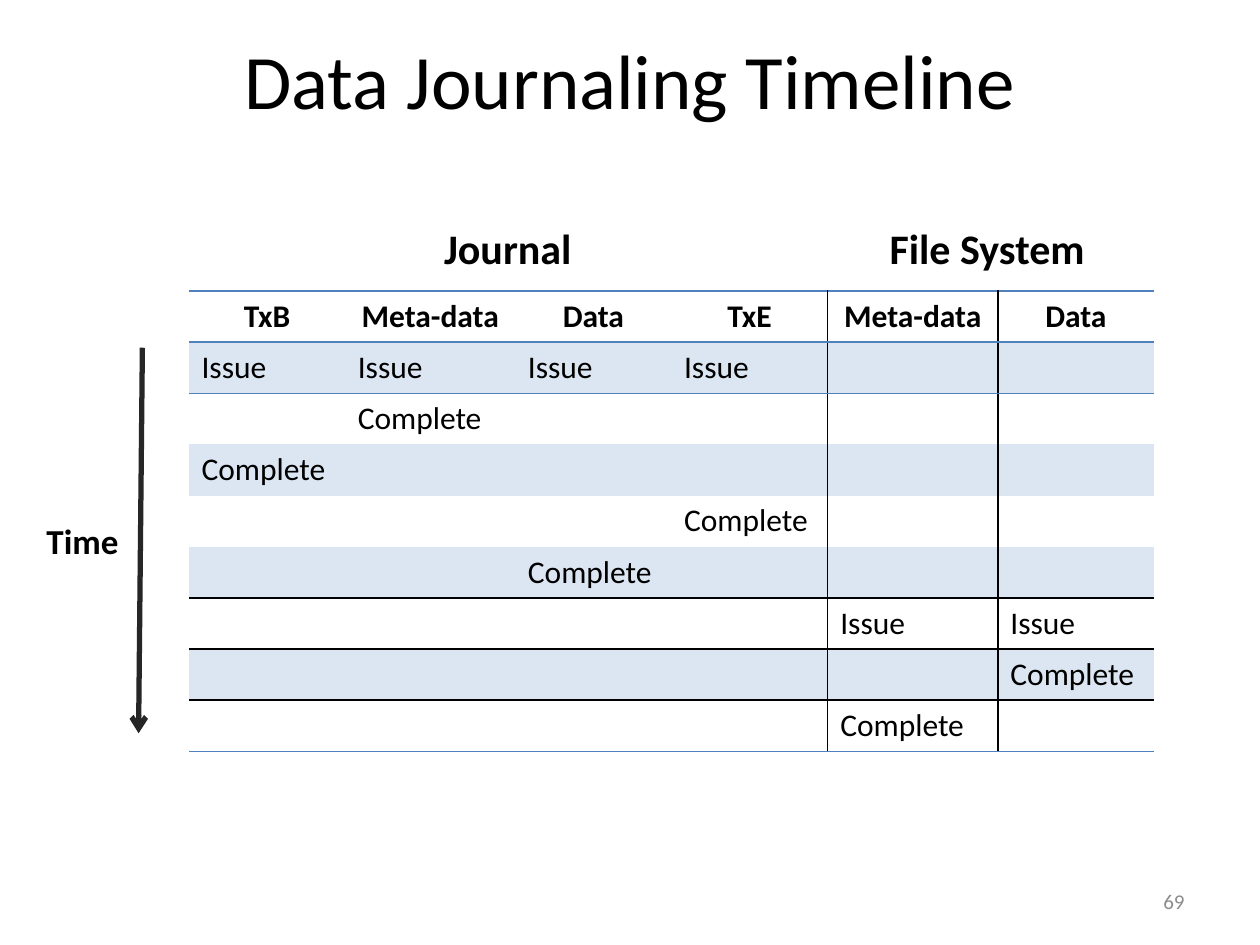
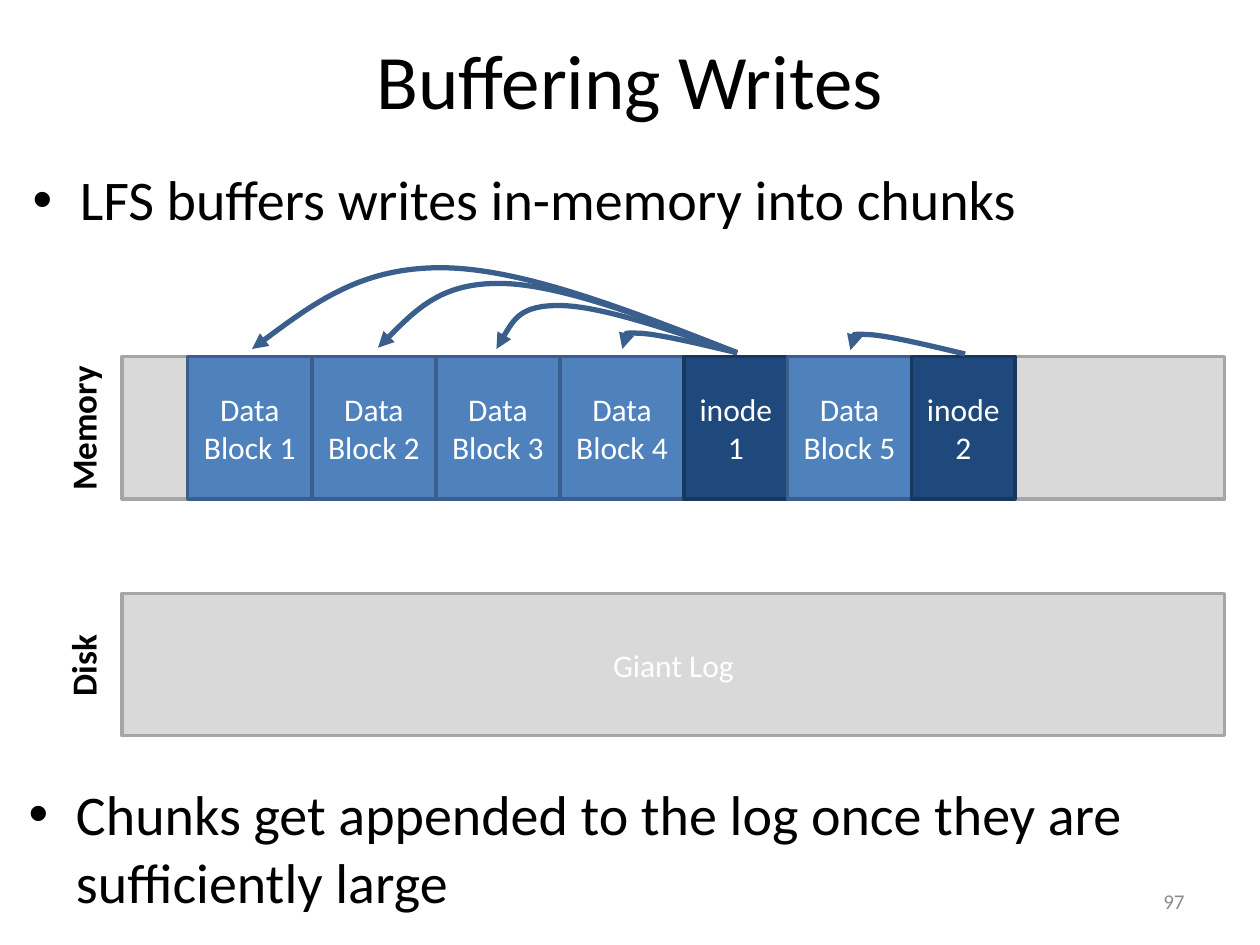
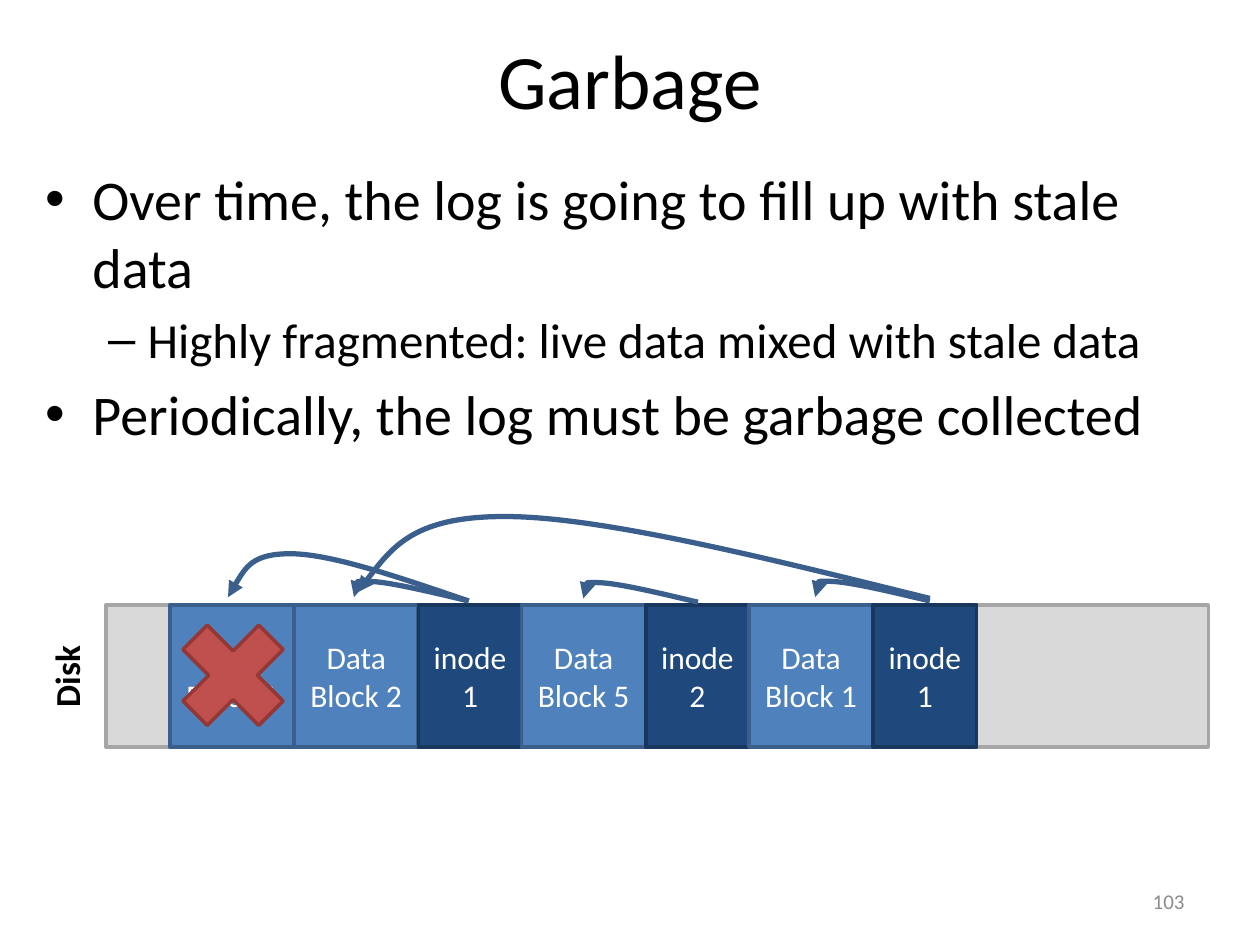
from itertools import product
from lxml.etree import SubElement
from pptx import Presentation
from pptx.dml.color import RGBColor
from pptx.enum.shapes import MSO_CONNECTOR, MSO_SHAPE
from pptx.enum.text import MSO_ANCHOR, MSO_AUTO_SIZE, PP_ALIGN
from pptx.oxml.ns import qn
from pptx.util import Inches, Pt

COLS, ROWS = 100, 75
CELL = Inches(0.1)
FONT = "Calibri"

BLACK = RGBColor(0x00, 0x00, 0x00)
WHITE = RGBColor(0xFF, 0xFF, 0xFF)
GRAY = RGBColor(0x8C, 0x8C, 0x8C)
COAL = RGBColor(0x26, 0x26, 0x26)
BLUE = RGBColor(0x4F, 0x81, 0xBD)
STEEL = RGBColor(0x3A, 0x5F, 0x8C)
PALE = RGBColor(0xDC, 0xE6, 0xF2)

BAR = (RGBColor(0xD9, 0xD9, 0xD9), RGBColor(0xA6, 0xA6, 0xA6))
DATA = (BLUE, STEEL)
NODE = (RGBColor(0x1F, 0x49, 0x7D), RGBColor(0x17, 0x37, 0x5E))
CROSS = (RGBColor(0xC0, 0x50, 0x4D), RGBColor(0x95, 0x37, 0x35))

TITLE = {"size": Pt(44), "color": BLACK}
HEAD = {"size": Pt(24), "bold": True, "color": BLACK}
SIDE = {"size": Pt(20), "bold": True, "color": BLACK}
BODY = {"size": Pt(32), "color": BLACK}
SUB = {"size": Pt(28), "color": BLACK}
LABEL = {"size": Pt(18), "color": WHITE}
ENTRY = {"size": Pt(18), "color": BLACK}
TOP = {"size": Pt(18), "bold": True, "color": BLACK}
FOOT = {"size": Pt(12), "color": GRAY}

LEVELS = [("•", 3.75, -3.75, BODY), ("–", 8.13, -3.13, SUB)]

BAR_W, BAR_H = 87.5, 11.3
DATA_W, NODE_W = 9.85, 8.2

NEAR = [(-6.3, -1.5), (-9.3, -1.6), (-9.1, -0.3)]
MID = [(-10.8, -3.7), (-17.2, -3.8), (-19.1, -0.3)]
FAR = [(-13.9, -5.4), (-23.4, -5.6), (-28.5, -0.4)]
LONG = [(-17, -6.7), (-29.8, -6.8), (-38.5, -0.3)]
WIDE = [(-25.8, -6.4), (-40.9, -6.6), (-45.4, -0.5)]

GRID_W = [12.4, 13.5, 12.4, 12.4, 13.5, 12.4]
GRID_H = 4.06
NAMES = ["TxB", "Meta-data", "Data", "TxE", "Meta-data", "Data"]
EVENTS = {
    1: {0: "Issue", 1: "Issue", 2: "Issue", 3: "Issue"},
    2: {1: "Complete"},
    3: {0: "Complete"},
    4: {3: "Complete"},
    5: {2: "Complete"},
    6: {4: "Issue", 5: "Issue"},
    7: {5: "Complete"},
    8: {4: "Complete"},
}
ROW_LINES = {0: BLUE, 1: BLUE, 6: BLACK, 7: BLACK, 9: BLUE}
COL_LINES = {4: BLACK, 5: BLACK}


def grid(*cells):
    return [round(n * CELL) for n in cells]


def style(run, form):
    run.font.name = FONT
    for key, val in form.items():
        if key == "color":
            run.font.color.rgb = val
        else:
            setattr(run.font, key, val)


def write(frame, text, form, align=PP_ALIGN.CENTER, **props):
    for key, val in props.items():
        setattr(frame, key, val)
    for num, line in enumerate(text.split("\n")):
        para = frame.add_paragraph() if num else frame.paragraphs[0]
        para.alignment = align
        run = para.add_run()
        run.text = line
        style(run, form)


def label(slide, box, text, form, align=PP_ALIGN.CENTER, turn=0, **props):
    shape = slide.shapes.add_textbox(*grid(*box))
    shape.rotation = turn
    write(shape.text_frame, text, form, align, **{"word_wrap": True, **props})
    return shape


def tag(slide, box, text, form, align=PP_ALIGN.CENTER, turn=0, wrap=False):
    label(slide, box, text, form, align, turn, word_wrap=wrap,
          auto_size=MSO_AUTO_SIZE.SHAPE_TO_FIT_TEXT)


def bullets(slide, box, items):
    frame = label(slide, box, "\n".join(text for text, _ in items), BODY,
                  PP_ALIGN.LEFT).text_frame
    for para, (_, level) in zip(frame.paragraphs, items):
        mark, left, hang, form = LEVELS[level]
        style(para.runs[0], form)
        props = para._p.get_or_add_pPr()
        for key, val in zip(("marL", "indent"), grid(left, hang)):
            props.set(key, str(val))
        gap = SubElement(props, qn("a:spcBef"))
        SubElement(gap, qn("a:spcPct"), val="20000")
        SubElement(props, qn("a:buFont"), typeface="Arial")
        SubElement(props, qn("a:buChar"), char=mark)


def block(slide, box, tint, text="", kind=MSO_SHAPE.RECTANGLE):
    shape = slide.shapes.add_shape(kind, *grid(*box))
    shape.shadow.inherit = False
    fill, edge = tint
    shape.fill.solid()
    shape.fill.fore_color.rgb = fill
    shape.line.color.rgb = edge
    shape.line.width = Pt(2)
    if text:
        write(shape.text_frame, text, LABEL, word_wrap=True,
              vertical_anchor=MSO_ANCHOR.MIDDLE)


def tip(shape, color, kind):
    shape.line.color.rgb = color
    shape.line.width = Pt(3)
    SubElement(shape.element.spPr.find(qn("a:ln")), qn("a:tailEnd"), type=kind)


def half(one, two):
    return tuple((a + b) / 2 for a, b in zip(one, two))


def arc(slide, left, top, bend):
    rise, fall, end = bend
    steps = [half((0, 0), rise), rise, half(rise, fall), fall, half(fall, end), end]
    pen = slide.shapes.build_freeform(*grid(left, top))
    pen.add_line_segments([grid(left + x, top + y) for x, y in steps], close=False)
    shape = pen.convert_to_shape()
    lines = list(shape.element.iter(qn("a:lnTo")))
    trace = lines[0].getparent()
    for trio in (lines[:3], lines[3:]):
        curve = SubElement(trace, qn("a:cubicBezTo"))
        for line in trio:
            curve.append(line[0])
            trace.remove(line)
    shape.fill.background()
    tip(shape, STEEL, "triangle")
    shape.shadow.inherit = False


def chain(slide, left, top, names):
    for name in names:
        node = name.startswith("inode")
        width = NODE_W if node else DATA_W
        block(slide, (left, top, width, BAR_H), NODE if node else DATA, name)
        left += width


def bar(slide, left, top, name, text=""):
    block(slide, (left, top, BAR_W, BAR_H), BAR, text)
    tag(slide, (left - 10.25, top + 3.5, 14.3, 4.4), name, SIDE, turn=270, wrap=True)


def table(slide, left, top):
    size = grid(left, top, sum(GRID_W), GRID_H * 9)
    chart = slide.shapes.add_table(9, len(GRID_W), *size).table
    props = chart._tbl.tblPr
    props.find(qn("a:tableStyleId")).text = "{2D5ABB26-0587-4C30-8999-92F81FD0307C}"
    chart.first_row = chart.horz_banding = False
    for col, width in zip(chart.columns, grid(*GRID_W)):
        col.width = width
    for row in chart.rows:
        row.height = grid(GRID_H)[0]
    for r, c in product(range(9), range(len(GRID_W))):
        cell = chart.cell(r, c)
        edges = {"L": COL_LINES.get(c), "R": COL_LINES.get(c + 1),
                 "T": ROW_LINES.get(r), "B": ROW_LINES.get(r + 1)}
        for side, color in edges.items():
            if color is not None:
                line = SubElement(cell._tc.get_or_add_tcPr(), qn("a:ln" + side),
                                  w=str(Pt(1)))
                fill = SubElement(line, qn("a:solidFill"))
                SubElement(fill, qn("a:srgbClr"), val=str(color))
        if r % 2:
            cell.fill.solid()
            cell.fill.fore_color.rgb = PALE
        else:
            cell.fill.background()
        if r == 0:
            write(cell.text_frame, NAMES[c], TOP)
        elif c in EVENTS[r]:
            write(cell.text_frame, EVENTS[r][c], ENTRY, PP_ALIGN.LEFT)


def page(deck, title, num):
    slide = deck.slides.add_slide(deck.slide_layouts[6])
    label(slide, (5, 0, 90, 12.5), title, TITLE, vertical_anchor=MSO_ANCHOR.MIDDLE)
    label(slide, (71.7, 69.5, 23.3, 4), str(num), FOOT, PP_ALIGN.RIGHT,
          vertical_anchor=MSO_ANCHOR.MIDDLE)
    return slide


def journal(deck):
    slide = page(deck, "Data Journaling Timeline", 69)
    table(slide, 15, 23.1)
    time = slide.shapes.add_connector(MSO_CONNECTOR.STRAIGHT,
                                      *grid(11.3, 27.6, 11, 58.2))
    tip(time, COAL, "arrow")
    SubElement(time.element.spPr, qn("a:effectLst"))
    tag(slide, (2.7, 40.7, 7.8, 4.4), "Time", SIDE, PP_ALIGN.LEFT)
    tag(slide, (34.2, 17.2, 12.2, 5), "Journal", HEAD)
    tag(slide, (69.5, 17.2, 17.7, 5), "File System", HEAD)


def buffer(deck):
    slide = page(deck, "Buffering Writes", 97)
    bullets(slide, (1.6, 12.6, 94.9, 7.8),
            [("LFS buffers writes in-memory into chunks", 0)])
    bullets(slide, (1.3, 61.4, 97.4, 11.8),
            [("Chunks get appended to the log once they are sufficiently large", 0)])
    bar(slide, 9.7, 28.3, "Memory")
    bar(slide, 9.7, 47.1, "Disk", "Giant Log")
    chain(slide, 14.9, 28.3,
          [f"Data Block {n}" for n in range(1, 5)]
          + ["inode\n1", "Data Block 5", "inode\n2"])
    for bend in (LONG, FAR, MID, NEAR):
        arc(slide, 58.5, 28, bend)
    arc(slide, 76.6, 28.1, NEAR)


def garbage(deck):
    slide = page(deck, "Garbage", 103)
    bullets(slide, (2.6, 12.6, 94.9, 56.6), [
        ("Over time, the log is going to fill up with stale data", 0),
        ("Highly fragmented: live data mixed with stale data", 1),
        ("Periodically, the log must be garbage collected", 0),
    ])
    bar(slide, 8.4, 48, "Disk")
    chain(slide, 13.5, 48, ["Data Block 1", "Data Block 2", "inode\n1",
                            "Data Block 5", "inode\n2", "Data Block 1", "inode\n1"])
    for left, top, bend in ((37.2, 47.7, NEAR), (55.4, 47.8, NEAR), (37.2, 47.7, MID),
                            (73.8, 47.7, NEAR), (73.8, 47.5, WIDE)):
        arc(slide, left, top, bend)
    block(slide, (12.7, 47.8, 11.6, 11.6), CROSS, kind=MSO_SHAPE.MATH_MULTIPLY)


def main():
    deck = Presentation()
    deck.slide_width, deck.slide_height = grid(COLS, ROWS)
    for build in (journal, buffer, garbage):
        build(deck)
    deck.save("out.pptx")


if __name__ == "__main__":
    main()
